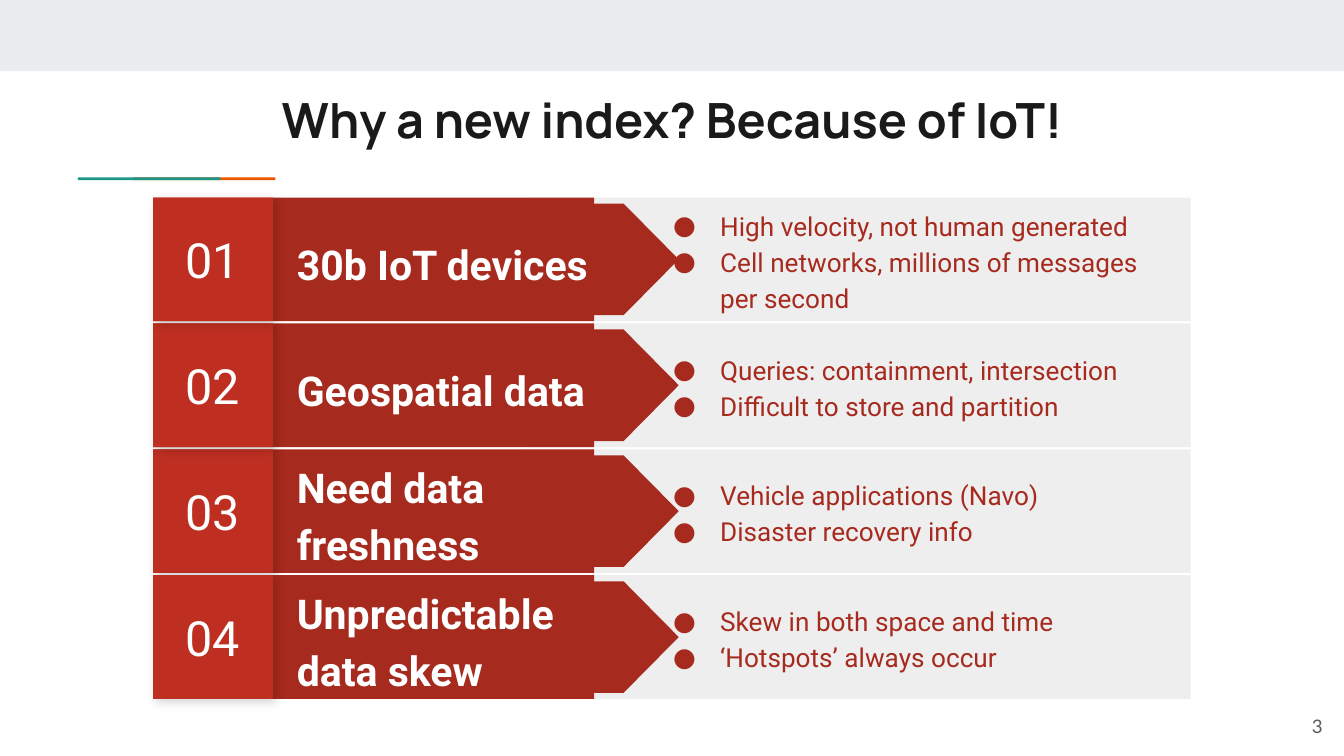
"""Build the slide that motivates a new index with four numbered reasons."""
from lxml.etree import SubElement
from pptx import Presentation
from pptx.dml.color import RGBColor
from pptx.enum.shapes import MSO_SHAPE
from pptx.enum.text import MSO_ANCHOR, PP_ALIGN
from pptx.oxml import parse_xml
from pptx.oxml.ns import nsdecls, qn
from pptx.util import Inches, Pt

TITLE = "Why a new index? Because of IoT!"
PAGE_NUMBER = "3"
REASONS = [
    ("30b IoT devices", ["High velocity, not human generated",
                         "Cell networks, millions of messages per second"]),
    ("Geospatial data", ["Queries: containment, intersection",
                         "Difficult to store and partition"]),
    ("Need data freshness", ["Vehicle applications (Navo)",
                             "Disaster recovery info"]),
    ("Unpredictable data skew", ["Skew in both space and time",
                                 "‘Hotspots’ always occur"]),
]
PAINT_ORDER = (2, 1, 0, 3)

WHITE = RGBColor(0xFF, 0xFF, 0xFF)
INK = RGBColor(0x1A, 0x1A, 0x1A)
GREY = RGBColor(0x59, 0x59, 0x59)
BAND = RGBColor(0xE9, 0xED, 0xEE)
PANEL = RGBColor(0xEE, 0xEE, 0xEE)
ORANGE = RGBColor(0xEB, 0x56, 0x00)
TEAL = RGBColor(0x1A, 0x99, 0x88)
DARK_RED = RGBColor(0xA7, 0x2A, 0x1E)
SHADE_RED = RGBColor(0xB0, 0x2C, 0x20)
RED = RGBColor(0xBE, 0x2F, 0x22)

TITLE_FONT = {"name": "Manrope", "size": Pt(26), "bold": True}
NUMBER_FONT = {"name": "Roboto", "size": Pt(26)}
HEADING_FONT = {"name": "Roboto", "size": Pt(22), "bold": True}
POINT_FONT = {"name": "Roboto", "size": Pt(14)}
PAGE_FONT = {"name": "Lato", "size": Pt(10)}

SLIDE_WIDTH = 10
SLIDE_HEIGHT = SLIDE_WIDTH * 9 / 16
FIRST_TOP, LAST_TOP, ROW_HEIGHT = 1.47, 4.28, 0.92
ROW_PITCH = (LAST_TOP - FIRST_TOP) / (len(REASONS) - 1)
NUMBER_LEFT, NUMBER_WIDTH = 1.14, 0.89
HEADING_HEIGHT = 0.71
ARROW_TIP, ARROW_LENGTH, ARROW_HEIGHT = 5.05, 2.05, 0.83


def add_block(slide, place, color, kind=MSO_SHAPE.RECTANGLE):
    block = slide.shapes.add_shape(kind, *map(Inches, place))
    block.shadow.inherit = False
    block.fill.solid()
    block.fill.fore_color.rgb = color
    block.line.fill.background()
    return block


def add_shadow(block):
    effects = block._element.spPr.find(qn("a:effectLst"))
    effects.append(parse_xml(
        f'<a:outerShdw {nsdecls("a")} blurRad="{Pt(5.6)}" dist="{Pt(2.2)}" '
        'dir="2700000" algn="bl" rotWithShape="0"><a:srgbClr val="000000">'
        '<a:alpha val="17000"/></a:srgbClr></a:outerShdw>'))


def add_bullet(para, font, color):
    properties = para._p.get_or_add_pPr()
    properties.set("marL", str(Inches(0.5)))
    properties.set("indent", str(Inches(-0.35)))
    bullet_color = SubElement(properties, qn("a:buClr"))
    SubElement(bullet_color, qn("a:srgbClr")).set("val", str(color))
    SubElement(properties, qn("a:buFont")).set("typeface", font["name"])
    SubElement(properties, qn("a:buChar")).set("char", "●")


def write(box, lines, font, color, align=PP_ALIGN.LEFT,
          anchor=MSO_ANCHOR.MIDDLE, spacing=None, bulleted=False):
    frame = box.text_frame
    frame.word_wrap = True
    frame.vertical_anchor = anchor
    for side in ("left", "top", "right", "bottom"):
        setattr(frame, f"margin_{side}", Inches(0.1))
    for index, line in enumerate(lines):
        para = frame.add_paragraph() if index else frame.paragraphs[0]
        para.alignment = align
        if spacing:
            para.line_spacing = spacing
        if bulleted:
            add_bullet(para, font, color)
        span = para.add_run()
        span.text = line
        for name, value in font.items():
            setattr(span.font, name, value)
        span.font.color.rgb = color


def add_text(slide, place, *content, **layout):
    box = slide.shapes.add_textbox(*map(Inches, place))
    write(box, *content, **layout)


def add_reason(slide, index):
    heading, points = REASONS[index]
    top = FIRST_TOP + index * ROW_PITCH
    middle = top + ROW_HEIGHT / 2
    add_block(slide, (3.91, top, 4.95, ROW_HEIGHT), PANEL)
    add_block(slide, (NUMBER_LEFT + NUMBER_WIDTH, top, 2.39, ROW_HEIGHT), DARK_RED)
    arrow_center = ARROW_TIP - ARROW_LENGTH / 2
    arrow = add_block(slide, (arrow_center - ARROW_HEIGHT / 2, middle - ARROW_LENGTH / 2,
                              ARROW_HEIGHT, ARROW_LENGTH),
                      DARK_RED, MSO_SHAPE.FLOWCHART_OFFPAGE_CONNECTOR)
    arrow.rotation = 270
    add_text(slide, (2.11, top + 0.11, 2.52, HEADING_HEIGHT),
             [heading], HEADING_FONT, WHITE, spacing=1.15)
    number_place = (NUMBER_LEFT, top, NUMBER_WIDTH, ROW_HEIGHT)
    add_shadow(add_block(slide, number_place, SHADE_RED))
    write(add_block(slide, number_place, RED), [f"{index + 1:02}"],
          NUMBER_FONT, WHITE, align=PP_ALIGN.CENTER)
    add_text(slide, (4.76, top, 3.85, ROW_HEIGHT), points, POINT_FONT,
             DARK_RED, spacing=1.15, bulleted=True)


def main():
    deck = Presentation()
    deck.slide_width, deck.slide_height = Inches(SLIDE_WIDTH), Inches(SLIDE_HEIGHT)
    slide = deck.slides.add_slide(deck.slide_layouts[6])
    add_block(slide, (0, 0, SLIDE_WIDTH, 0.53), BAND)
    for left, color in ((0.99, ORANGE), (0.58, TEAL)):
        add_block(slide, (left, 1.32, 1.06, 0.02), color)
    add_text(slide, (0.8, 0.57, 8.41, 0.59), [TITLE], TITLE_FONT, INK,
             align=PP_ALIGN.CENTER, anchor=MSO_ANCHOR.TOP)
    for index in PAINT_ORDER:
        add_reason(slide, index)
    add_text(slide, (9.34, 5.19, 0.6, 0.43), [PAGE_NUMBER], PAGE_FONT, GREY,
             align=PP_ALIGN.RIGHT)
    deck.save("out.pptx")


if __name__ == "__main__":
    main()
